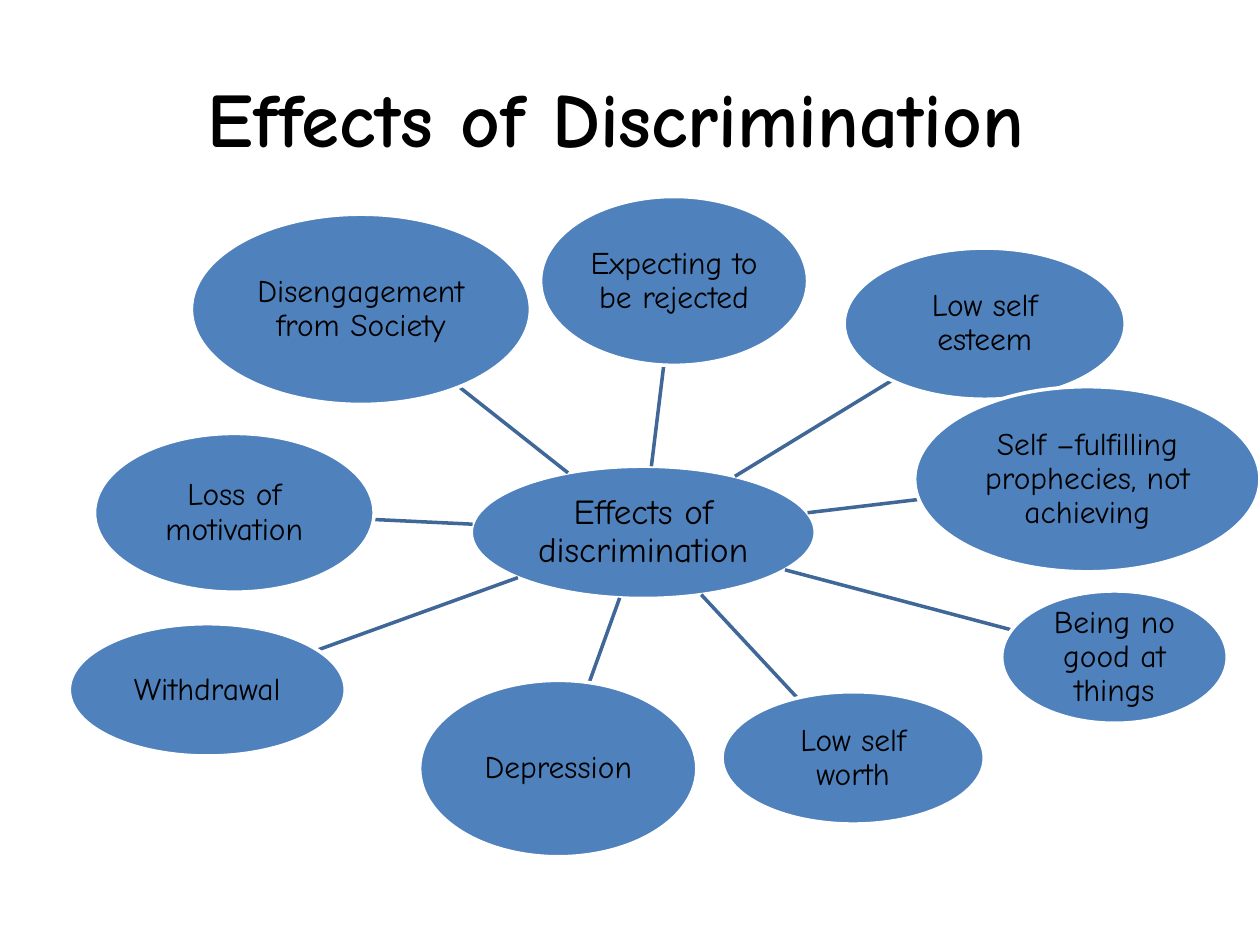
from dataclasses import dataclass
from math import hypot

from lxml.etree import SubElement
from pptx import Presentation
from pptx.dml.color import RGBColor
from pptx.enum.shapes import MSO_CONNECTOR as Connector, MSO_SHAPE as Shape
from pptx.enum.text import MSO_ANCHOR as Anchor, PP_ALIGN as Align
from pptx.oxml.ns import qn
from pptx.slide import Slide
from pptx.text.text import TextFrame
from pptx.util import Pt


@dataclass(frozen=True)
class Theme:
    font: str = "Comic Neue"
    text: RGBColor = RGBColor(0x00, 0x00, 0x00)
    bubble: RGBColor = RGBColor(0x4F, 0x81, 0xBD)
    outline: RGBColor = RGBColor(0xFF, 0xFF, 0xFF)
    spoke: RGBColor = RGBColor(0x3F, 0x67, 0x97)
    title_size: float = 44
    hub_size: float = 20
    effect_size: float = 18
    line_width: float = 2
    inset: float = 0.9


THEME = Theme()


@dataclass(frozen=True)
class Bubble:
    """An ellipse with a label; lengths in points."""
    label: str
    left: float
    top: float
    width: float
    height: float
    size: float = THEME.effect_size

    @property
    def center(self) -> tuple[float, float]:
        return self.left + self.width / 2, self.top + self.height / 2

    def edge_towards(self, other: "Bubble") -> tuple[float, float]:
        """Point where the line between both centers leaves this ellipse."""
        x, y = self.center
        dx, dy = other.center[0] - x, other.center[1] - y
        scale = 1 / hypot(dx / (self.width / 2), dy / (self.height / 2))
        return x + dx * scale, y + dy * scale


HUB = Bubble("Effects of discrimination", 269.3, 266.4, 196.6, 75.6, THEME.hub_size)

# Clockwise from the top
EFFECTS = [
    Bubble("Expecting to be rejected", 308.9, 112.3, 152.6, 96.5),
    Bubble("Low self esteem", 482.4, 141.8, 160.6, 86.4),
    Bubble("Self –fulfilling prophecies, not achieving", 522.7, 221, 197.3, 105.8),
    Bubble("Being no good at things", 572.4, 337.7, 128.9, 75.6),
    Bubble("Low self worth", 412.6, 395.3, 149.8, 75.6),
    Bubble("Depression", 239.8, 388.8, 158.4, 100.8),
    Bubble("Withdrawal", 39.6, 356.4, 157.7, 75.6),
    Bubble("Loss of motivation", 54, 247.7, 159.8, 90.7),
    Bubble("Disengagement from Society", 109.4, 122.4, 193.7, 108.7),
]


def write_text(frame: TextFrame, text: str, size: float, bold: bool = False) -> None:
    frame.text = text
    frame.word_wrap = True
    frame.vertical_anchor = Anchor.MIDDLE
    paragraph = frame.paragraphs[0]
    paragraph.alignment = Align.CENTER
    font = paragraph.runs[0].font
    font.name, font.size, font.bold = THEME.font, Pt(size), bold
    font.color.rgb = THEME.text


def draw_bubble(slide: Slide, bubble: Bubble) -> None:
    box = (bubble.left, bubble.top, bubble.width, bubble.height)
    shape = slide.shapes.add_shape(Shape.OVAL, *map(Pt, box))
    shape.shadow.inherit = False
    shape.fill.solid()
    shape.fill.fore_color.rgb = THEME.bubble
    shape.line.color.rgb = THEME.outline
    shape.line.width = Pt(THEME.line_width)
    frame = shape.text_frame
    frame.margin_left = frame.margin_right = Pt(THEME.inset)
    frame.margin_top = frame.margin_bottom = Pt(THEME.inset)
    write_text(frame, bubble.label, bubble.size)
    frame.paragraphs[0].line_spacing = 0.9


def draw_spoke(slide: Slide, start: Bubble, end: Bubble) -> None:
    points = (*start.edge_towards(end), *end.edge_towards(start))
    spoke = slide.shapes.add_connector(Connector.STRAIGHT, *map(Pt, points))
    spoke.line.color.rgb = THEME.spoke
    spoke.line.width = Pt(THEME.line_width)
    SubElement(spoke._element.spPr, qn("a:effectLst"))


def main() -> None:
    presentation = Presentation()
    presentation.slide_width, presentation.slide_height = Pt(720), Pt(540)
    slide = presentation.slides.add_slide(presentation.slide_layouts[5])

    # Title
    title = slide.shapes.title
    title.left, title.top, title.width, title.height = map(Pt, (36, 21.6, 648, 90))
    write_text(title.text_frame, "Effects of Discrimination ", THEME.title_size, bold=True)

    # Hub, then each effect with its spoke
    draw_bubble(slide, HUB)
    for effect in EFFECTS:
        draw_spoke(slide, HUB, effect)
        draw_bubble(slide, effect)

    presentation.save("out.pptx")


if __name__ == "__main__":
    main()
